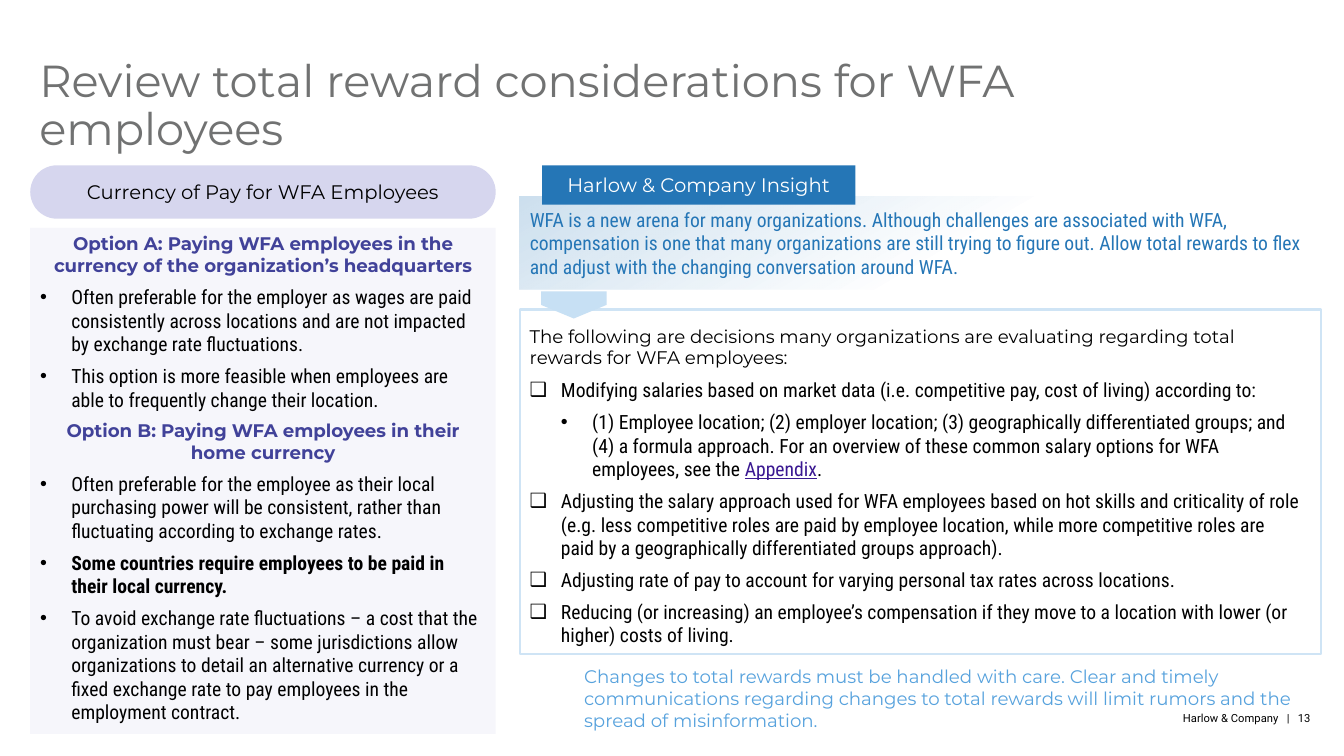
import dataclasses

import lxml.etree
import pptx
import pptx.dml.color
import pptx.enum.shapes
import pptx.enum.text
import pptx.oxml
import pptx.oxml.ns
import pptx.util

Inches = pptx.util.Inches
Pt = pptx.util.Pt
Shape = pptx.enum.shapes.MSO_SHAPE
Align = pptx.enum.text.PP_ALIGN
Anchor = pptx.enum.text.MSO_ANCHOR
qn = pptx.oxml.ns.qn


@dataclasses.dataclass(frozen=True)
class Style:
    font: str
    size: float
    color: str
    bold: bool = False
    underline: bool = False


@dataclasses.dataclass(frozen=True)
class Theme:
    lavender: str = "D6D6EE"
    blue: str = "2576B6"
    pale_blue: str = "C7E0F4"
    frame: str = "CFE4F5"
    title: Style = Style("Montserrat", 32, "717272")
    footer: Style = Style("Roboto", 8, "000000")
    header: Style = Style("Montserrat", 14, "000000")
    banner: Style = Style("Montserrat", 14, "FFFFFF")
    option: Style = Style("Montserrat", 13, "414299", bold=True)
    intro: Style = Style("Montserrat", 13, "000000")
    caution: Style = Style("Montserrat", 13, "57A2DD")
    insight: Style = Style("Roboto Condensed", 14, "2576B6")
    body: Style = Style("Roboto Condensed", 14, "000000")
    strong: Style = Style("Roboto Condensed", 14, "000000", bold=True)
    link: Style = Style("Roboto Condensed", 14, "3A1891", underline=True)


THEME = Theme()
INDENT = 0.31
DOT = "•"
CHECK = "❑"

CURRENCY_OPTIONS = [
    ("Option A: Paying WFA employees in the currency of the organization’s headquarters", [
        ("Often preferable for the employer as wages are paid consistently across locations "
         "and are not impacted by exchange rate fluctuations.", THEME.body),
        ("This option is more feasible when employees are able to frequently change their "
         "location.", THEME.body),
    ]),
    ("Option B: Paying WFA employees in their home currency", [
        ("Often preferable for the employee as their local purchasing power will be consistent, "
         "rather than fluctuating according to exchange rates.", THEME.body),
        ("Some countries require employees to be paid in their local currency.", THEME.strong),
        ("To avoid exchange rate fluctuations – a cost that the organization must bear – some "
         "jurisdictions allow organizations to detail an alternative currency or a fixed "
         "exchange rate to pay employees in the employment contract.", THEME.body),
    ]),
]

DECISIONS = [
    (0, [("Modifying salaries based on market data (i.e. competitive pay, cost of living) "
          "according to:", THEME.body)]),
    (1, [("(1) Employee location; (2) employer location; (3) geographically differentiated "
          "groups; and (4) a formula approach. For an overview of these common salary options "
          "for WFA employees, see the ", THEME.body),
         ("Appendix", THEME.link),
         (".", THEME.body)]),
    (0, [("Adjusting the salary approach used for WFA employees based on hot skills and "
          "criticality of role (e.g. less competitive roles are paid by employee location, "
          "while more competitive roles are paid by a geographically differentiated groups "
          "approach).", THEME.body)]),
    (0, [("Adjusting rate of pay to account for varying personal tax rates across locations.",
          THEME.body)]),
    (0, [("Reducing (or increasing) an employee’s compensation if they move to a location with "
          "lower (or higher) costs of living.", THEME.body)]),
]


def rgb(color):
    return pptx.dml.color.RGBColor.from_string(color)


def add_box(page, kind, left, top, width, height, fill=None, line=None):
    box = page.shapes.add_shape(kind, Inches(left), Inches(top), Inches(width), Inches(height))
    box.shadow.inherit = False
    if fill:
        box.fill.solid()
        box.fill.fore_color.rgb = rgb(fill)
    else:
        box.fill.background()
    if line:
        box.line.color.rgb = rgb(line)
        box.line.width = Pt(1.5)
    else:
        box.line.fill.background()
    return box


def add_text_area(page, left, top, width, height):
    return page.shapes.add_textbox(Inches(left), Inches(top), Inches(width), Inches(height))


def set_frame(box, anchor=Anchor.TOP, inset=True):
    frame = box.text_frame
    frame.word_wrap = True
    frame.vertical_anchor = anchor
    if not inset:
        frame.margin_left = frame.margin_right = frame.margin_top = frame.margin_bottom = 0
    return frame


def add_para(frame, spans, align=Align.LEFT, before=0, after=0, spacing=None):
    first = frame.paragraphs[0]
    para = frame.add_paragraph() if first.runs else first
    para.alignment = align
    para.space_before = Pt(before)
    para.space_after = Pt(after)
    if spacing:
        para.line_spacing = spacing
    for text, style in spans:
        span = para.add_run()
        span.text = text
        span.font.name = style.font
        span.font.size = Pt(style.size)
        span.font.bold = style.bold
        span.font.underline = style.underline
        span.font.color.rgb = rgb(style.color)
    return para


def add_bullet(frame, spans, mark, level=0):
    para = add_para(frame, spans, before=6)
    para.level = level
    properties = para._p.get_or_add_pPr()
    properties.set("marL", str(Inches(INDENT * (level + 1))))
    properties.set("indent", str(-Inches(INDENT)))
    lxml.etree.SubElement(properties, qn("a:buFont")).set("typeface", "Arial")
    lxml.etree.SubElement(properties, qn("a:buChar")).set("char", mark)


def add_label(box, text, style, align=Align.LEFT, around=0):
    frame = set_frame(box, Anchor.MIDDLE)
    add_para(frame, [(text, style)], align, around, around)


def set_alpha(color_element, percent):
    lxml.etree.SubElement(color_element, qn("a:alpha")).set("val", str(percent * 1000))


def fade_out(box, color, start_alpha, end, angle):
    box.fill.gradient()
    gradient = box._element.spPr.find(qn("a:gradFill"))
    stops = gradient.find(qn("a:gsLst"))
    for stop, place, alpha in zip(stops, (0, end), (start_alpha, 0)):
        stop.set("pos", str(place * 1000))
        stop.remove(stop[0])
        tint = lxml.etree.SubElement(stop, qn("a:srgbClr"))
        tint.set("val", color)
        set_alpha(tint, alpha)
    direction = gradient.find(qn("a:lin"))
    direction.set("ang", str(angle * 60000))
    direction.set("scaled", "0")


def add_heading(page):
    title = set_frame(add_text_area(page, 0.39, 0.58, 12.16, 1.24), inset=False)
    add_para(title, [("Review total reward considerations for WFA employees", THEME.title)],
             spacing=0.9)
    footer = set_frame(add_text_area(page, 10.74, 7.04, 2.27, 0.2), inset=False)
    add_para(footer, [("Harlow & Company\u00a0\u00a0 | \u00a0\u00a013".replace("\u00a0", " "), THEME.footer)],
             Align.RIGHT, spacing=1.1)


def add_currency_column(page):
    pill = add_box(page, Shape.ROUNDED_RECTANGLE, 0.3, 1.64, 4.62, 0.53, THEME.lavender)
    pill.adjustments[0] = 0.5
    add_label(pill, "Currency of Pay for WFA Employees", THEME.header, Align.CENTER)
    panel = add_box(page, Shape.RECTANGLE, 0.3, 2.26, 4.62, 5.02, THEME.lavender)
    set_alpha(panel._element.spPr.find(qn("a:solidFill"))[0], 20)
    frame = set_frame(panel)
    for heading, points in CURRENCY_OPTIONS:
        add_para(frame, [(heading, THEME.option)], Align.CENTER, before=6)
        for point in points:
            add_bullet(frame, [point], DOT)


def add_decisions(page):
    add_box(page, Shape.RECTANGLE, 5.16, 3.07, 7.95, 3.42, line=THEME.frame)
    add_label(add_text_area(page, 5.16, 3.15, 7.87, 0.58),
              "The following are decisions many organizations are evaluating regarding total "
              "rewards for WFA employees:", THEME.intro)
    frame = set_frame(add_text_area(page, 5.16, 3.7, 7.87, 2.79))
    for level, spans in DECISIONS:
        add_bullet(frame, spans, DOT if level else CHECK, level)
    add_label(add_text_area(page, 5.7, 6.63, 7.36, 0.59),
              "Changes to total rewards must be handled with care. Clear and timely "
              "communications regarding changes to total rewards will limit rumors and the "
              "spread of misinformation.", THEME.caution)


def add_insight(page):
    panel = add_box(page, Shape.RECTANGLE, 5.16, 1.95, 7.95, 0.92)
    fade_out(panel, THEME.blue, 23, 54, 60)
    add_label(panel, "WFA is a new arena for many organizations. Although challenges are "
              "associated with WFA, compensation is one that many organizations are still "
              "trying to figure out. Allow total rewards to flex and adjust with the changing "
              "conversation around WFA.", THEME.insight, around=3)
    banner = add_box(page, Shape.RECTANGLE, 5.38, 1.64, 3.11, 0.39, THEME.blue)
    add_label(banner, "Harlow & Company Insight", THEME.banner, Align.CENTER)
    pointer = add_box(page, Shape.PENTAGON, 5.56, 2.7, 0.27, 0.65, THEME.pale_blue)
    pointer.rotation = 90


def main():
    deck = pptx.Presentation()
    deck.slide_width = Inches(13.34)
    deck.slide_height = Inches(7.5)
    page = deck.slides.add_slide(deck.slide_layouts[6])
    add_heading(page)
    add_currency_column(page)
    add_decisions(page)
    add_insight(page)
    deck.save("out.pptx")


if __name__ == "__main__":
    main()
